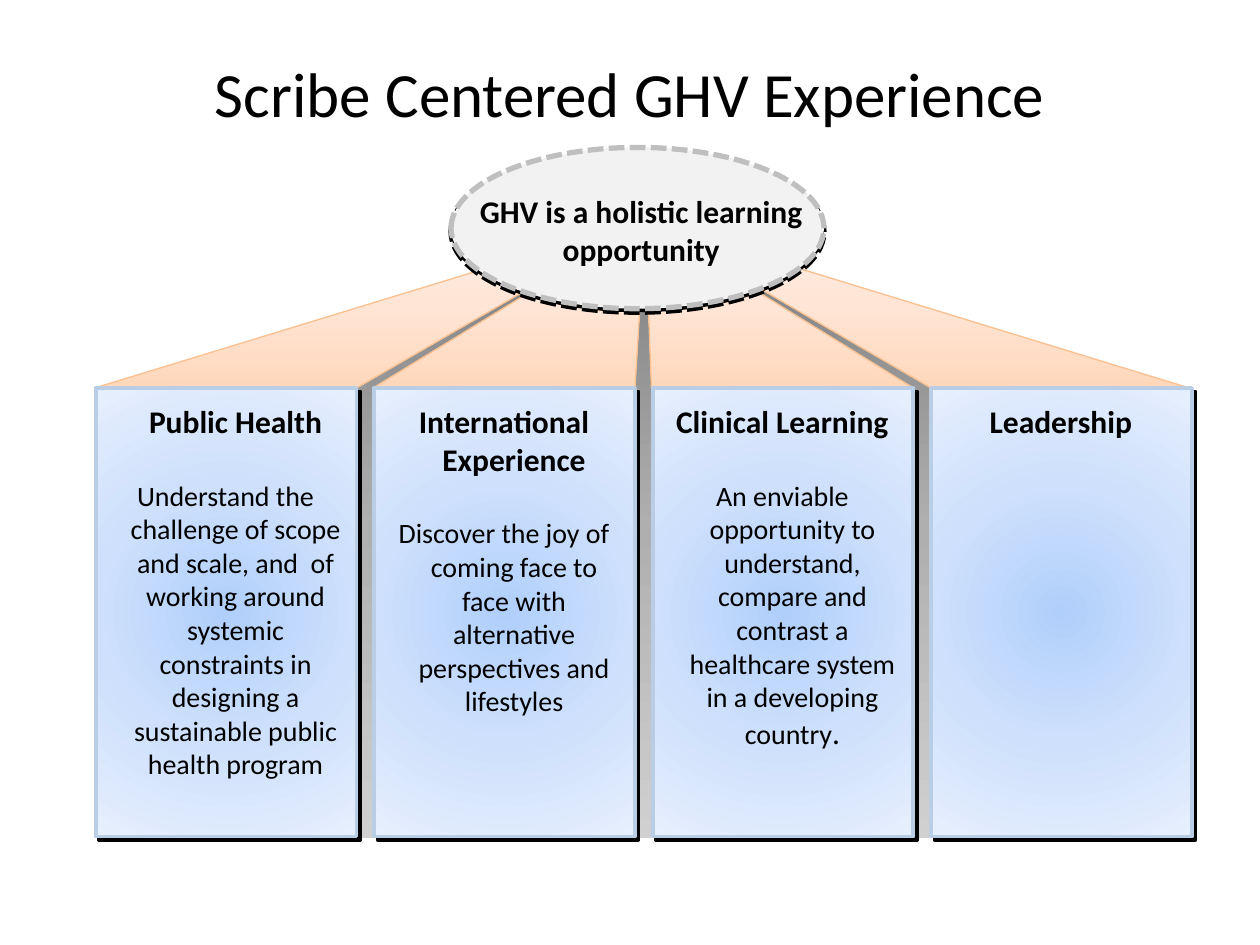
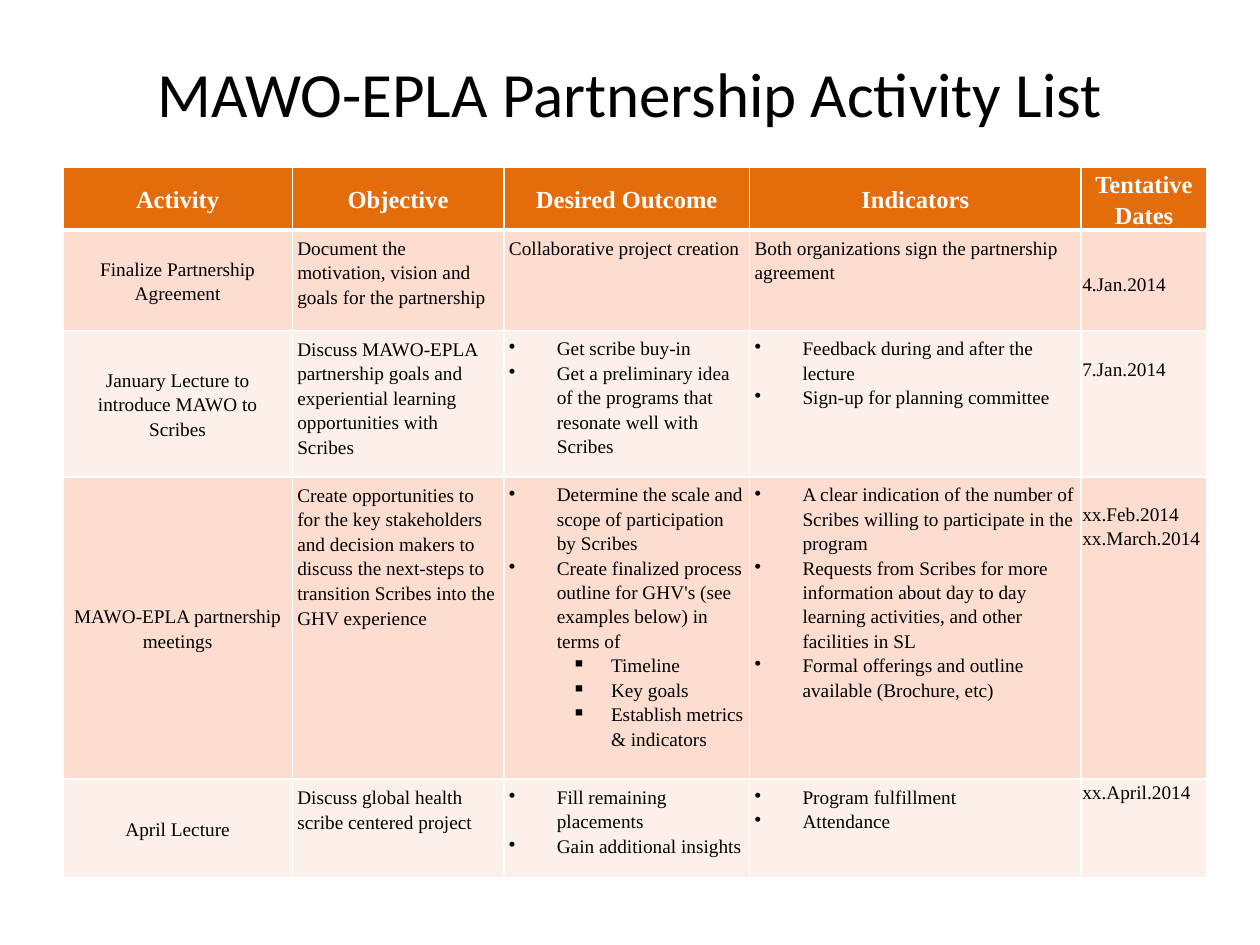
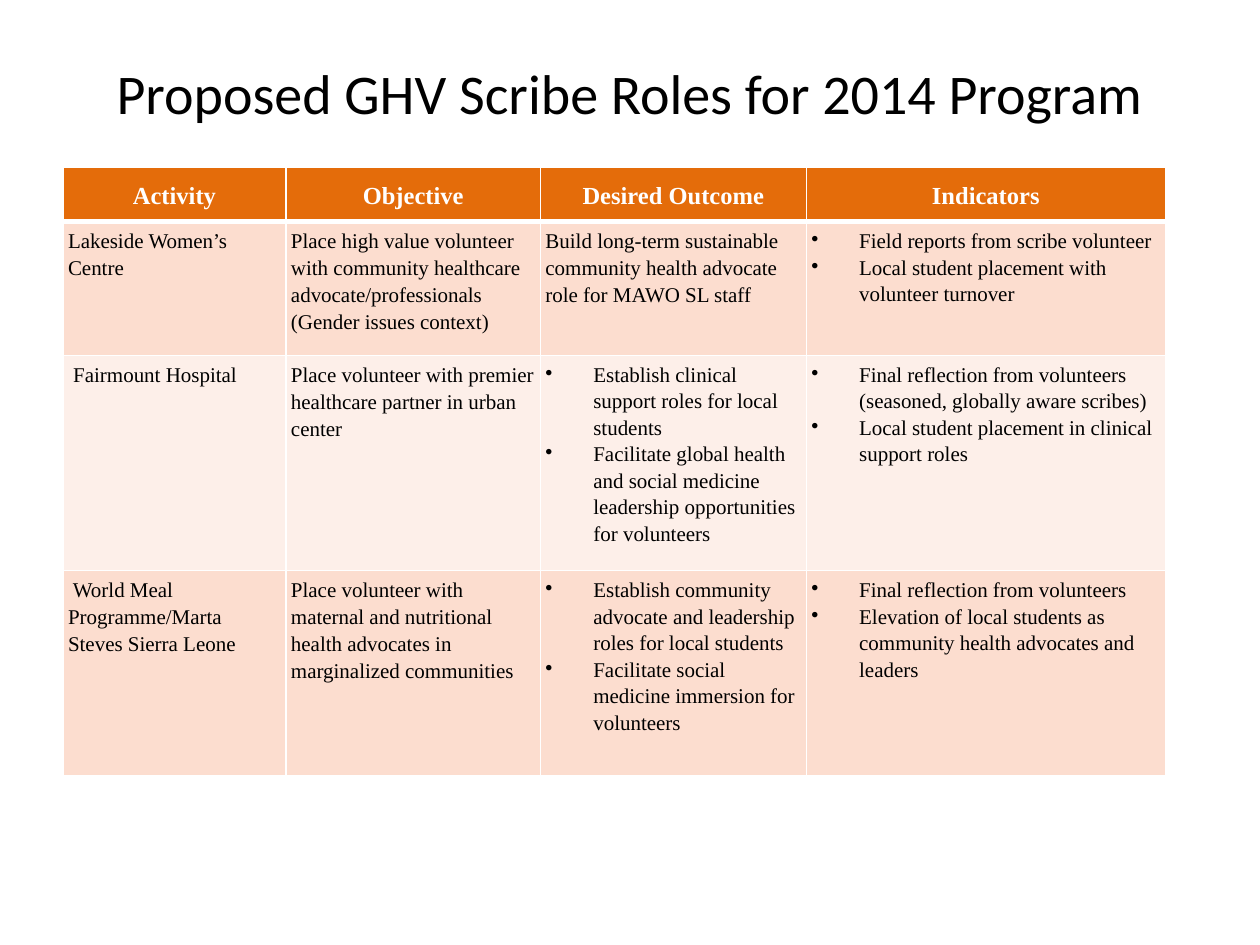
from dataclasses import dataclass
from typing import NamedTuple

from lxml import etree
from pptx import Presentation
from pptx import util as u
from pptx.dml.color import RGBColor
from pptx.enum import dml, shapes, text
from pptx.oxml.ns import qn

Inches, Pt = u.Inches, u.Pt

# Shared look
COLORS = {
    "black": "000000",
    "white": "FFFFFF",
    "header": "E46C0A",
    "band_dark": "FCDDCF",
    "band_light": "FDEFE9",
    "pillar_edge": "B9CDE5",
    "fan_edge": "FAC090",
    "hub": "F2F2F2",
    "hub_edge": "BFBFBF",
}
BACKDROP_STOPS = ("7B7B7B", "AFAFAF", "D0D0D0")
FAN_STOPS = ("FFD8BC", "FFE5D5", "FFF2EA")
PILLAR_STOPS = ("B0CFFB", "CEE0FC", "E6EFFD")
SANS, SERIF = "Calibri", "Times New Roman"
CENTER = text.PP_ALIGN.CENTER
MIDDLE = text.MSO_ANCHOR.MIDDLE


class Box(NamedTuple):
    left: float
    top: float
    width: float
    height: float

    def lengths(self) -> list:
        return [Inches(value) for value in self]


class Dates(NamedTuple):
    lines: tuple
    top: float = 0


@dataclass
class Pillar:
    heading: str
    body: str = ""
    ending: str = ""
    heading_indent: float = -0.16


@dataclass
class ActivityTable:
    title: str
    title_size: int
    text_size: int
    widths: tuple
    heights: tuple
    centered_activity: bool
    header: tuple
    rows: tuple


def rgb(name: str) -> RGBColor:
    return RGBColor.from_string(COLORS[name])


# Text helpers
def add_run(paragraph, words: str, size: float, font: str = SANS,
            color: str = "black", bold: bool = False) -> None:
    run = paragraph.add_run()
    run.text = words
    run.font.name, run.font.size, run.font.bold = font, Pt(size), bold
    run.font.color.rgb = rgb(color)


def set_indent(paragraph, margin: float, first: float, bullet: str = "") -> None:
    props = paragraph._p.get_or_add_pPr()
    props.set("marL", str(Inches(margin)))
    props.set("indent", str(Inches(first)))
    if bullet:
        etree.SubElement(props, qn("a:buChar"), char=bullet)


def next_paragraph(frame):
    """Return the unused first paragraph, or a new one."""
    first = frame.paragraphs[0]
    return frame.add_paragraph() if first.runs else first


def add_text_frame(slide, box: Box):
    frame = slide.shapes.add_textbox(*box.lengths()).text_frame
    frame.word_wrap = True
    frame.margin_left = frame.margin_right = 0
    frame.margin_top = frame.margin_bottom = 0
    return frame


def add_titled_slide(prs, title: str, size: int):
    slide = prs.slides.add_slide(prs.slide_layouts[5])
    heading = slide.shapes.title
    heading.left, heading.top, heading.width, heading.height = Box(0.5, 0.3, 9, 0.87).lengths()
    frame = heading.text_frame
    frame.auto_size = text.MSO_AUTO_SIZE.NONE
    frame.vertical_anchor = MIDDLE
    frame.paragraphs[0].alignment = CENTER
    add_run(frame.paragraphs[0], title, size)
    return slide


# Shape helpers
def set_gradient(shape, stops: tuple, angle: int | None = None) -> None:
    """Fill evenly spaced stops along an angle, or from the centre without one."""
    shape.fill.gradient()
    fill = shape._element.spPr.find(qn("a:gradFill"))
    for child in list(fill):
        fill.remove(child)
    stop_list = etree.SubElement(fill, qn("a:gsLst"))
    for i, color in enumerate(stops):
        stop = etree.SubElement(stop_list, qn("a:gs"), pos=str(i * 50000))
        etree.SubElement(stop, qn("a:srgbClr"), val=color)
    if angle is None:
        circle = etree.SubElement(fill, qn("a:path"), path="circle")
        etree.SubElement(circle, qn("a:fillToRect"), l="50000", t="50000", r="50000", b="50000")
    else:
        etree.SubElement(fill, qn("a:lin"), ang=str(angle * 60000), scaled="0")


def set_line(shape, color: str, width: float) -> None:
    shape.line.color.rgb = rgb(color)
    shape.line.width = Pt(width)


def set_hard_shadow(shape, distance: float, angle: int) -> None:
    shape.shadow.inherit = False
    effects = shape._element.spPr.find(qn("a:effectLst"))
    shadow = etree.SubElement(effects, qn("a:outerShdw"), blurRad="0", dist=str(Pt(distance)),
                              dir=str(angle * 60000), algn="ctr", rotWithShape="0")
    etree.SubElement(shadow, qn("a:srgbClr"), val=COLORS["black"])


def add_outline(slide, points: tuple, stops: tuple, angle: int):
    (x, y), *rest = [(Inches(px), Inches(py)) for px, py in points]
    builder = slide.shapes.build_freeform(x, y)
    builder.add_line_segments(rest, close=True)
    outline = builder.convert_to_shape()
    outline.shadow.inherit = False
    set_gradient(outline, stops, angle)
    return outline


# Pillar slide
BACKDROP = ((2.78, 6.65), (7.49, 6.65), (7.49, 3.07), (5.1, 1.73), (2.72, 3.07), (2.72, 6.65))
FAN = ((0.75, 3.08), (5.1, 1.75), (9.44, 3.08), (7.39, 3.08), (5.1, 1.75), (7.25, 3.08),
       (5.17, 3.08), (5.12, 1.75), (5.04, 3.08), (2.96, 3.08), (5.1, 1.77), (2.83, 3.08))
PILLAR_LEFT, PILLAR_STEP, PILLAR_PADDING = 0.76, 2.21, 0.08
PILLARS = (
    Pillar("Public Health",
           "Understand the challenge of scope and scale, and  of working around systemic "
           "constraints in designing a sustainable public health program",
           heading_indent=0),
    Pillar("International Experience",
           "Discover the joy of coming face to face with alternative perspectives and lifestyles"),
    Pillar("Clinical Learning",
           "An enviable opportunity to understand, compare and contrast a healthcare system "
           "in a developing country", "."),
    Pillar("Leadership"),
)


def add_pillar_panel(slide, left: float) -> None:
    panel = slide.shapes.add_shape(shapes.MSO_SHAPE.RECTANGLE,
                                   *Box(left, 3.08, 2.07, 3.56).lengths())
    set_gradient(panel, PILLAR_STOPS)
    set_line(panel, "pillar_edge", 2.25)
    set_hard_shadow(panel, 2.8, 45)


def add_pillar_text(slide, left: float, pillar: Pillar) -> None:
    frame = add_text_frame(slide, Box(left + PILLAR_PADDING, 3.19, 1.9, 3.03))
    heading = frame.paragraphs[0]
    heading.alignment = CENTER
    set_indent(heading, 0.16, pillar.heading_indent)
    add_run(heading, pillar.heading, 18, bold=True)
    if pillar.body:
        body = frame.add_paragraph()
        body.alignment = CENTER
        body.space_before = Pt(22)
        set_indent(body, 0.16, -0.16)
        add_run(body, pillar.body, 16)
        if pillar.ending:
            add_run(body, pillar.ending, 18)


def add_hub(slide) -> None:
    hub = slide.shapes.add_shape(shapes.MSO_SHAPE.OVAL, *Box(3.58, 1.17, 2.96, 1.28).lengths())
    hub.fill.solid()
    hub.fill.fore_color.rgb = rgb("hub")
    set_line(hub, "hub_edge", 3)
    hub.line.dash_style = dml.MSO_LINE.SQUARE_DOT
    set_hard_shadow(hub, 2, 90)
    frame = add_text_frame(slide, Box(3.76, 1.25, 2.66, 1.15))
    frame.vertical_anchor = MIDDLE
    frame.paragraphs[0].alignment = CENTER
    add_run(frame.paragraphs[0], "GHV is a holistic learning opportunity", 18, bold=True)


def build_pillar_slide(prs) -> None:
    slide = add_titled_slide(prs, "Scribe Centered GHV Experience", 36)
    backdrop = add_outline(slide, BACKDROP, BACKDROP_STOPS, 90)
    backdrop.line.fill.background()
    fan = add_outline(slide, FAN, FAN_STOPS, 270)
    set_line(fan, "fan_edge", 0.75)
    lefts = [PILLAR_LEFT + i * PILLAR_STEP for i in range(len(PILLARS))]
    for left in lefts:
        add_pillar_panel(slide, left)
    add_hub(slide)
    for left, pillar in zip(lefts, PILLARS):
        add_pillar_text(slide, left, pillar)


# Table slides: a string is plain text, a list holds bullets, an inner list sub-bullets
HEADER = ("Activity", "Objective", "Desired Outcome", "Indicators")
ACTIVITIES = ActivityTable(
    "MAWO-EPLA Partnership Activity List", 36, 11,
    (1.82, 1.68, 1.95, 2.63, 1), (0.36, 0.8, 1.16, 2.4, 0.78), True,
    HEADER + (Dates(("Tentative Dates",)),),
    (
        ("Finalize Partnership Agreement",
         "Document the motivation, vision and goals for the partnership",
         "Collaborative project creation",
         "Both organizations sign the partnership agreement",
         Dates(("4.Jan.2014",), 0.33)),
        ("January Lecture to introduce MAWO to Scribes",
         "Discuss MAWO-EPLA partnership goals and experiential learning opportunities "
         "with Scribes",
         ["Get scribe buy-in",
          "Get a preliminary idea of the programs that resonate well with Scribes"],
         ["Feedback during and after the lecture", "Sign-up for planning committee"],
         Dates(("7.Jan.2014",), 0.2)),
        ("MAWO-EPLA partnership meetings",
         "Create opportunities to for the key stakeholders and decision makers to discuss "
         "the next-steps to transition Scribes into the GHV experience",
         ["Determine the scale and scope of participation by Scribes",
          "Create finalized process outline for GHV's (see examples below) in terms of",
          ["Timeline", "Key goals", "Establish metrics & indicators"]],
         ["A clear indication of the number of Scribes willing to participate in the program",
          "Requests from Scribes for more information about day to day learning activities, "
          "and other facilities in SL",
          "Formal offerings and outline available (Brochure, etc)"],
         Dates(("xx.Feb.2014", "xx.March.2014"), 0.19)),
        ("April Lecture",
         "Discuss global health scribe centered project",
         ["Fill remaining placements", "Gain additional insights"],
         ["Program fulfillment", "Attendance"],
         Dates(("xx.April.2014",))),
    ),
)
ROLES = ActivityTable(
    "Proposed GHV Scribe Roles for 2014 Program", 32, 12,
    (1.77, 2.02, 2.11, 2.85), (0.43, 1.06, 1.71, 1.63), False, HEADER,
    (
        ("Lakeside Women’s Centre",
         "Place high value volunteer with community healthcare advocate/professionals "
         "(Gender issues context)",
         "Build long-term sustainable community health advocate role for MAWO SL staff",
         ["Field reports from scribe volunteer",
          "Local student placement with volunteer turnover"]),
        (" Fairmount Hospital",
         "Place volunteer with premier healthcare partner in urban center",
         ["Establish clinical support roles for local students",
          "Facilitate global health and social medicine leadership opportunities "
          "for volunteers"],
         ["Final reflection from volunteers (seasoned, globally aware scribes)",
          "Local student placement in clinical support roles"]),
        (" World Meal Programme/Marta Steves Sierra Leone",
         "Place volunteer with maternal and nutritional health advocates in marginalized "
         "communities",
         ["Establish community advocate and leadership roles for local students",
          "Facilitate social medicine immersion for volunteers"],
         ["Final reflection from volunteers",
          "Elevation of local students as community health advocates and leaders"]),
    ),
)


def set_borders(cell, top: float, bottom: float) -> None:
    props = cell._tc.get_or_add_tcPr()
    widths = {"a:lnL": 1, "a:lnR": 1, "a:lnT": top, "a:lnB": bottom}
    for tag, width in widths.items():
        border = etree.SubElement(props, qn(tag), w=str(Pt(width)))
        fill = etree.SubElement(border, qn("a:solidFill"))
        etree.SubElement(fill, qn("a:srgbClr"), val=COLORS["white"])


def add_bullets(frame, items: list, size: int, level: int = 0) -> None:
    for item in items:
        if isinstance(item, list):
            add_bullets(frame, item, size, level + 1)
            continue
        paragraph = next_paragraph(frame)
        paragraph.level = level
        paragraph.line_spacing = 1.14
        set_indent(paragraph, *((0.81, -0.31, "▪") if level else (0.38, -0.38, "•")))
        add_run(paragraph, item, size, SERIF)


def fill_cell(cell, content, size: int, is_header: bool, centered: bool) -> None:
    is_dates = isinstance(content, Dates)
    side, edge = (0.01, 0) if is_dates else (0.04, 0.04)
    cell.margin_left = cell.margin_right = Inches(side)
    cell.margin_top = Inches(content.top if is_dates else edge)
    cell.margin_bottom = Inches(edge)
    if centered:
        cell.vertical_anchor = MIDDLE
    if isinstance(content, list):
        add_bullets(cell.text_frame, content, size)
        return
    for line in content.lines if is_dates else (content,):
        paragraph = next_paragraph(cell.text_frame)
        paragraph.line_spacing = 1.15
        if is_header or not is_dates:
            paragraph.space_after = Pt(10)
        if centered:
            paragraph.alignment = CENTER
        add_run(paragraph, line, size, SERIF, "white" if is_header else "black", is_header)


def build_table_slide(prs, page: ActivityTable) -> None:
    slide = add_titled_slide(prs, page.title, page.title_size)
    box = Box(0.5, 1.33, sum(page.widths), sum(page.heights))
    table = slide.shapes.add_table(len(page.heights), len(page.widths), *box.lengths()).table
    table.horz_banding = False
    for column, width in zip(table.columns, page.widths):
        column.width = Inches(width)
    for row, height in zip(table.rows, page.heights):
        row.height = Inches(height)
    for r, contents in enumerate((page.header, *page.rows)):
        is_header = r == 0
        band = "header" if is_header else "band_dark" if r % 2 else "band_light"
        for c, content in enumerate(contents):
            cell = table.cell(r, c)
            centered = is_header or (c == 0 and page.centered_activity)
            fill_cell(cell, content, 14 if is_header else page.text_size, is_header, centered)
            set_borders(cell, 3 if r == 1 else 1, 3 if is_header else 1)
            cell.fill.solid()
            cell.fill.fore_color.rgb = rgb(band)


def main() -> None:
    prs = Presentation()
    prs.slide_width, prs.slide_height = Inches(10), Inches(7.5)
    build_pillar_slide(prs)
    for page in (ACTIVITIES, ROLES):
        build_table_slide(prs, page)
    prs.save("out.pptx")


if __name__ == "__main__":
    main()
